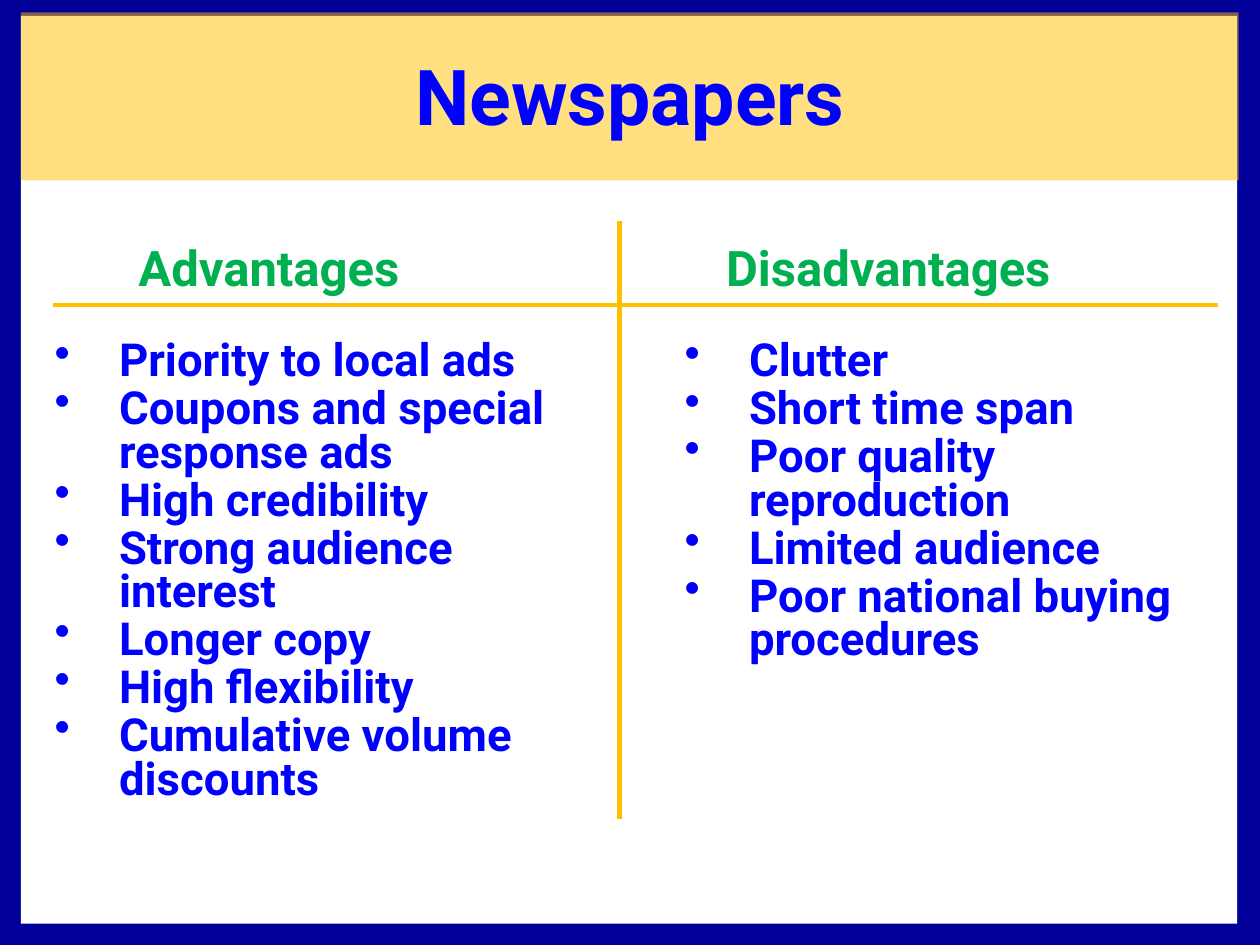
"""Build a slide that weighs the advantages and disadvantages of newspapers."""
from dataclasses import dataclass

from lxml import etree
from pptx import Presentation
from pptx.dml.color import RGBColor
from pptx.enum.shapes import MSO_CONNECTOR, MSO_SHAPE
from pptx.enum.text import MSO_ANCHOR, MSO_AUTO_SIZE, PP_ALIGN
from pptx.oxml.ns import qn
from pptx.util import Cm, Pt

RECTANGLE = MSO_SHAPE.RECTANGLE
STRAIGHT = MSO_CONNECTOR.STRAIGHT
MIDDLE = MSO_ANCHOR.MIDDLE
CENTER = PP_ALIGN.CENTER
FIT_SHAPE = MSO_AUTO_SIZE.SHAPE_TO_FIT_TEXT

NAVY = RGBColor(0x00, 0x00, 0x99)
WHITE = RGBColor(0xFF, 0xFF, 0xFF)
GOLD = RGBColor(0xFF, 0xC0, 0x00)
BLUE = RGBColor(0x00, 0x00, 0xFF)
GREEN = RGBColor(0x00, 0xB0, 0x50)
FONT = "Roboto"
HANGING = Cm(1.3)


@dataclass(frozen=True)
class Area:
    """A rectangle on the slide, in centimetres."""

    left: float
    top: float
    width: float
    height: float

    def lengths(self) -> tuple[Cm, Cm, Cm, Cm]:
        """Return the four measures as lengths."""
        return Cm(self.left), Cm(self.top), Cm(self.width), Cm(self.height)


@dataclass(frozen=True)
class Column:
    """One side of the comparison."""

    heading: str
    heading_area: Area
    points: tuple[str, ...]
    points_area: Area


@dataclass(frozen=True)
class Rule:
    """A straight dividing line, in centimetres, with its weight in points."""

    start: tuple[float, float]
    end: tuple[float, float]
    weight: float


FRAME = Area(0, -0.2, 25.4, 19.43)
PANEL = Area(0.42, 0.32, 24.52, 18.3)
BAND = Area(0.42, 0.25, 24.55, 3.39)
TITLE = Area(0.85, 0.64, 23.71, 2.54)
COLUMNS = (
    Column(
        "Advantages",
        Area(2.54, 4.66, 6.32, 1.45),
        (
            "Priority to local ads",
            "Coupons and special response ads",
            "High credibility",
            "Strong audience interest",
            "Longer copy",
            "High flexibility",
            "Cumulative volume discounts",
        ),
        Area(0.85, 6.77, 11.22, 9.74),
    ),
    Column(
        "Disadvantages",
        Area(14.39, 4.66, 7.8, 1.45),
        (
            "Clutter",
            "Short time span",
            "Poor quality reproduction",
            "Limited audience",
            "Poor national buying procedures",
        ),
        Area(13.55, 6.77, 10.37, 8.26),
    ),
)
RULES = (
    Rule((12.49, 4.45), (12.49, 16.51), 3),
    Rule((1.06, 6.14), (24.55, 6.14), 2.25),
)


def add_block(page, area: Area, color: RGBColor, opacity: int = 100) -> None:
    """Draw a filled rectangle without an outline."""
    block = page.shapes.add_shape(RECTANGLE, *area.lengths())
    block.shadow.inherit = False
    block.line.fill.background()
    block.fill.solid()
    block.fill.fore_color.rgb = color
    if opacity < 100:
        tint = block.fill._xPr.find(f".//{qn('a:srgbClr')}")
        etree.SubElement(tint, qn("a:alpha"), val=str(opacity * 1000))


def add_text(page, area: Area, text: str, size: int, color: RGBColor, wrap: bool = False):
    """Write bold text in a box and return its frame."""
    frame = page.shapes.add_textbox(*area.lengths()).text_frame
    frame.word_wrap = wrap
    frame.text = text
    for para in frame.paragraphs:
        for span in para.runs:
            span.font.name = FONT
            span.font.size = Pt(size)
            span.font.bold = True
            span.font.color.rgb = color
    return frame


def add_bullet(para) -> None:
    """Give a paragraph a hanging bullet and tight spacing."""
    para.line_spacing = 0.8
    para.space_before = Pt(2.4)
    properties = para._p.get_or_add_pPr()
    properties.set("marL", str(HANGING))
    properties.set("indent", str(-HANGING))
    bullet_color = etree.SubElement(properties, qn("a:buClr"))
    etree.SubElement(bullet_color, qn("a:srgbClr"), val=str(BLUE))
    etree.SubElement(properties, qn("a:buChar"), char="•")


def add_column(page, column: Column) -> None:
    """Write a heading and its bulleted points."""
    heading = add_text(page, column.heading_area, column.heading, 28, GREEN)
    heading.auto_size = FIT_SHAPE
    points = add_text(page, column.points_area, "\n".join(column.points), 26, BLUE, wrap=True)
    for para in points.paragraphs:
        add_bullet(para)


def add_rule(page, rule: Rule) -> None:
    """Draw a gold dividing line."""
    ends = (Cm(value) for value in rule.start + rule.end)
    line = page.shapes.add_connector(STRAIGHT, *ends)
    line.line.color.rgb = GOLD
    line.line.width = Pt(rule.weight)
    etree.SubElement(line._element.spPr, qn("a:effectLst"))


def main() -> None:
    """Assemble and save the deck."""
    deck = Presentation()
    deck.slide_width, deck.slide_height = Cm(25.4), Cm(19.05)
    page = deck.slides.add_slide(deck.slide_layouts[6])
    add_block(page, FRAME, NAVY)
    add_block(page, PANEL, WHITE)
    add_block(page, BAND, GOLD, opacity=50)
    title = add_text(page, TITLE, "Newspapers", 44, BLUE)
    title.vertical_anchor = MIDDLE
    title.paragraphs[0].alignment = CENTER
    for column in COLUMNS:
        add_column(page, column)
    for rule in RULES:
        add_rule(page, rule)
    deck.save("out.pptx")


if __name__ == "__main__":
    main()
